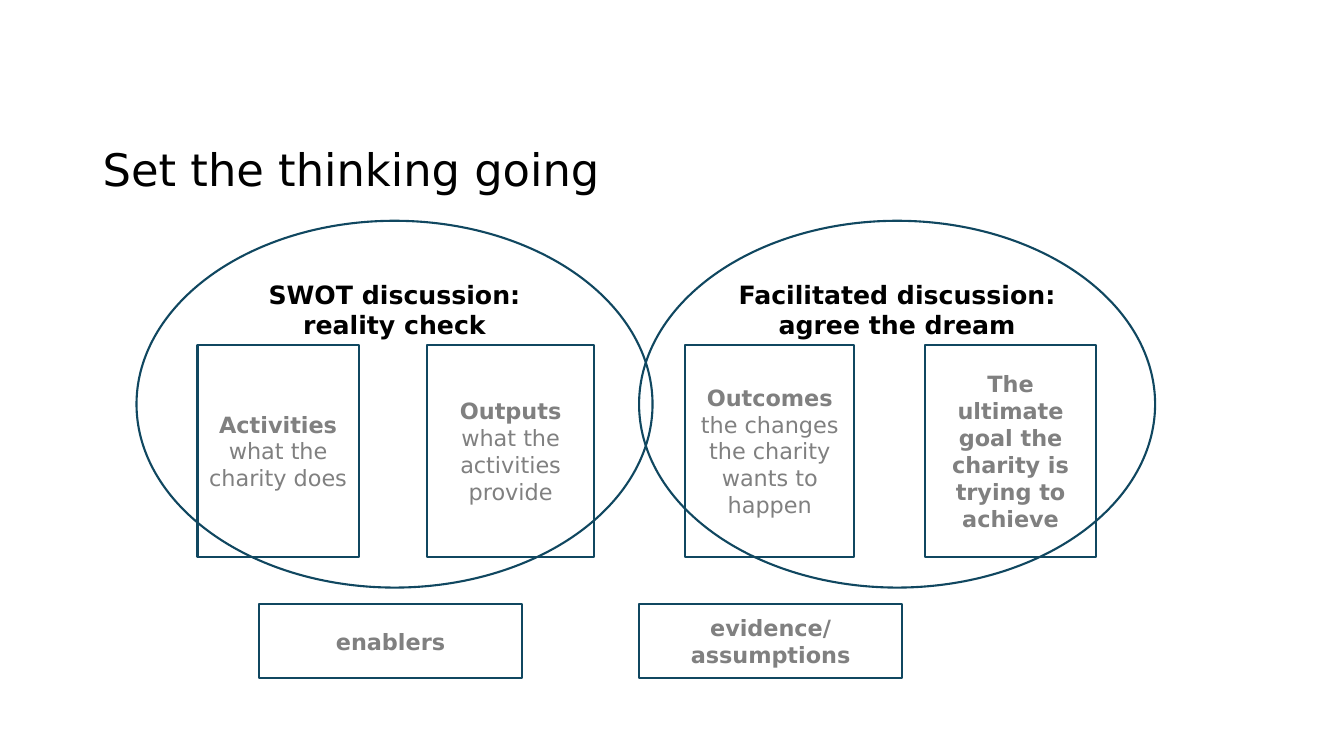
from pptx import Presentation
from pptx.dml.color import RGBColor
from pptx.enum.shapes import MSO_SHAPE
from pptx.enum.text import MSO_ANCHOR, MSO_AUTO_SIZE, PP_ALIGN
from pptx.util import Pt

RECTANGLE, OVAL = MSO_SHAPE.RECTANGLE, MSO_SHAPE.OVAL
TOP, MIDDLE = MSO_ANCHOR.TOP, MSO_ANCHOR.MIDDLE
LEFT, CENTER = PP_ALIGN.LEFT, PP_ALIGN.CENTER
NO_AUTO_SIZE = MSO_AUTO_SIZE.NONE
WHITE = RGBColor(0xFF, 0xFF, 0xFF)
BLACK = RGBColor(0x00, 0x00, 0x00)
GRAY = RGBColor(0x80, 0x80, 0x80)
TEAL = RGBColor(0x10, 0x47, 0x60)
FONT = "DejaVu Sans"


def format_font(font, size, color, bold):
    font.name = FONT
    font.size = Pt(size)
    font.color.rgb = color
    font.bold = bold


def add_outlined_shape(kind, position, lines, size, color, anchor):
    shape = slide.shapes.add_shape(kind, *[Pt(length) for length in position])
    shape.shadow.inherit = False
    shape.line.color.rgb = TEAL
    shape.line.width = Pt(1.5)
    text_frame = shape.text_frame
    text_frame.word_wrap = True
    text_frame.vertical_anchor = anchor
    text_frame.text = "\n".join(lines)
    for paragraph in text_frame.paragraphs:
        paragraph.alignment = CENTER
        for run in paragraph.runs:
            format_font(run.font, size, color, True)
    return shape


presentation = Presentation()
presentation.slide_width = Pt(960)
presentation.slide_height = Pt(540)
slide = presentation.slides.add_slide(presentation.slide_layouts[5])

title = slide.shapes.title
title.left, title.top, title.width, title.height = Pt(66.2), Pt(70.6), Pt(828), Pt(104.4)
title.text_frame.text = "Set the thinking going"
title.text_frame.auto_size = NO_AUTO_SIZE
title.text_frame.vertical_anchor = MIDDLE
title_paragraph = title.text_frame.paragraphs[0]
title_paragraph.alignment = LEFT
title_paragraph.line_spacing = 0.9
format_font(title_paragraph.runs[0].font, 32, BLACK, False)

stages = [
    (661, 121.7, "The ultimate goal the charity is trying to achieve", ""),
    (489.6, 120.5, "Outcomes ", "the changes the charity wants to happen"),
    (305.3, 119, "Outputs ", "what the activities provide"),
    (141.1, 115.2, "Activities ", "what the charity does"),
]
for left, width, heading, description in stages:
    box = add_outlined_shape(RECTANGLE, (left, 246.2, width, 152), [heading], 16, GRAY, MIDDLE)
    box.fill.solid()
    box.fill.fore_color.rgb = WHITE
    if description:
        run = box.text_frame.paragraphs[0].add_run()
        run.text = description
        format_font(run.font, 16, GRAY, False)

for left, lines in [(185, ["enablers"]), (456.5, ["evidence/", "assumptions"])]:
    box = add_outlined_shape(RECTANGLE, (left, 431.3, 188, 53.3), lines, 16, GRAY, MIDDLE)
    box.fill.solid()
    box.fill.fore_color.rgb = WHITE

discussions = [
    (97.5, ["SWOT discussion: reality check"]),
    (456.5, ["Facilitated discussion:", "agree the dream"]),
]
for left, lines in discussions:
    ellipse = add_outlined_shape(OVAL, (left, 157.7, 368.6, 262), lines, 18, BLACK, TOP)
    ellipse.fill.background()

presentation.save("out.pptx")
